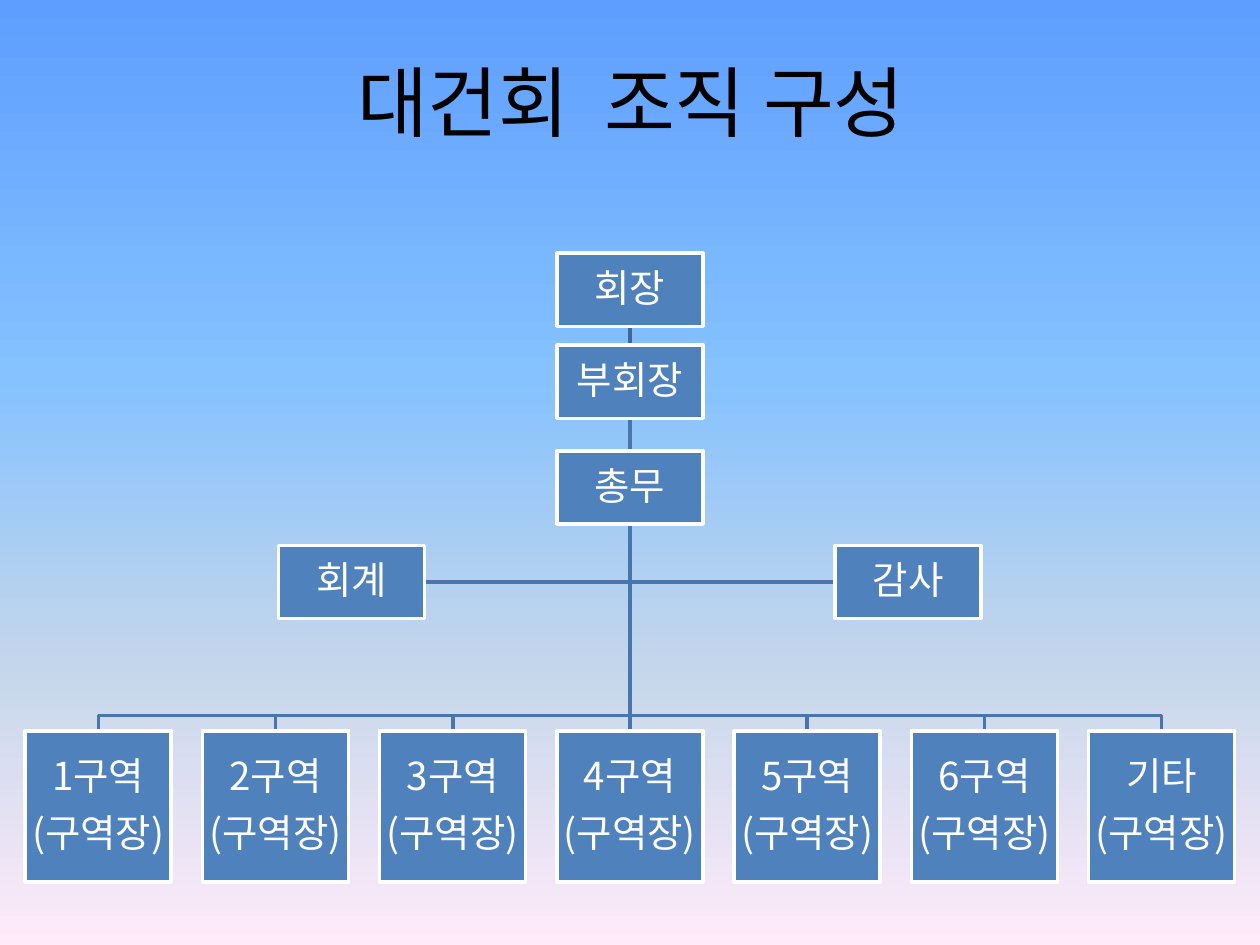
from copy import deepcopy

from pptx import Presentation
from pptx.dml.color import RGBColor
from pptx.enum.shapes import MSO_CONNECTOR, MSO_SHAPE
from pptx.enum.text import MSO_ANCHOR, PP_ALIGN
from pptx.oxml.ns import qn
from pptx.util import Inches, Pt

COLORS = {"box": "4F81BD", "line": "4875AC", "top_line": "3F6797",
          "white": "FFFFFF", "black": "000000"}
SKY = [(0, "5E9EFF"), (0.4, "85C2FF"), (0.7, "C4D6EB"), (1, "FFEBFA")]
FONT = "Noto Sans CJK KR"
DISTRICTS = ["1구역", "2구역", "3구역", "4구역", "5구역", "6구역", "기타"]


def write(frame, text, size=22, color="white", inset=0.02, spacing=0.9, after=9):
    """Fill a text frame with centred paragraphs, one for each line of text."""
    frame.word_wrap = True
    frame.vertical_anchor = MSO_ANCHOR.MIDDLE
    frame.margin_left = frame.margin_right = Inches(inset)
    frame.margin_top = frame.margin_bottom = Inches(inset)
    for index, line in enumerate(text.split("\n")):
        para = frame.paragraphs[0] if index == 0 else frame.add_paragraph()
        para.alignment = PP_ALIGN.CENTER
        para.line_spacing = spacing
        para.space_after = Pt(after)
        span = para.add_run()
        span.text = line
        span.font.name = FONT
        span.font.size = Pt(size)
        span.font.color.rgb = RGBColor.from_string(COLORS[color])
        properties = span.font._element
        east_asian = properties.makeelement(qn("a:ea"), {"typeface": FONT})
        properties.find(qn("a:latin")).addnext(east_asian)


class Chart:
    """Draw an organisation chart on a grid of centred columns and 75 rows."""

    def __init__(self, deck, page, count):
        self.page = page
        self.middle = deck.slide_width // 2
        self.row = deck.slide_height / 75
        self.box_width = Inches(1.16)
        self.column = (deck.slide_width - 2 * Inches(0.2) - self.box_width) / (count - 1)

    def point(self, column, row):
        return round(self.middle + column * self.column), round(row * self.row)

    def background(self, stops):
        fill = self.page.background.fill
        fill.gradient()
        fill.gradient_angle = 270
        stop_list = self.page.element.find(".//" + qn("a:gsLst"))
        while len(stop_list) < len(stops):
            stop_list.append(deepcopy(stop_list[0]))
        for stop, (position, color) in zip(fill.gradient_stops, stops):
            stop.position = position
            stop.color.rgb = RGBColor.from_string(color)

    def title(self, text):
        box = self.page.shapes.add_textbox(Inches(0.51), Inches(0.17), Inches(9), Inches(1.25))
        write(box.text_frame, text, size=44, color="black", inset=0.05, spacing=1, after=0)

    def box(self, text, column, row, rows=5.8):
        center, top = self.point(column, row)
        box = self.page.shapes.add_shape(
            MSO_SHAPE.RECTANGLE, center - self.box_width // 2, top,
            self.box_width, round(rows * self.row))
        box.shadow.inherit = False
        box.fill.solid()
        box.fill.fore_color.rgb = RGBColor.from_string(COLORS["box"])
        self.stroke(box, "white")
        write(box.text_frame, text)
        return box

    def stroke(self, shape, color):
        shape.line.color.rgb = RGBColor.from_string(COLORS[color])
        shape.line.width = Pt(2)

    def send_back(self, shape):
        self.page.shapes.element.insert(2, shape.element)

    def link(self, upper, lower, color="line"):
        line = self.page.shapes.add_connector(MSO_CONNECTOR.STRAIGHT, 0, 0, 0, 0)
        line.begin_connect(upper, 2)
        line.end_connect(lower, 0)
        self.stroke(line, color)
        properties = line.element.spPr
        properties.append(properties.makeelement(qn("a:effectLst"), {}))
        self.send_back(line)

    def elbow(self, start, *points):
        builder = self.page.shapes.build_freeform(*start)
        builder.add_line_segments(points, close=False)
        bend = builder.convert_to_shape()
        bend.shadow.inherit = False
        bend.fill.background()
        self.stroke(bend, "line")
        self.send_back(bend)


def main():
    """Build and save the organisation slide."""
    deck = Presentation()
    deck.slide_width, deck.slide_height = Inches(10), Inches(7.5)
    page = deck.slides.add_slide(deck.slide_layouts[6])
    chart = Chart(deck, page, len(DISTRICTS))
    chart.background(SKY)
    chart.title("대건회  조직 구성")

    president = chart.box("회장", 0, 20.1)
    deputy = chart.box("부회장", 0, 27.4)
    secretary = chart.box("총무", 0, 35.8)
    chart.link(president, deputy, "top_line")
    chart.link(deputy, secretary)
    trunk = chart.point(0, 41.6)

    for number, name in enumerate(DISTRICTS):
        column = number - len(DISTRICTS) // 2
        district = chart.box(f"{name}\n(구역장)", column, 58, rows=12)
        if column == 0:
            chart.link(secretary, district)
        else:
            chart.elbow(trunk, chart.point(0, 56.8), chart.point(column, 56.8),
                        chart.point(column, 58))

    for name, side in (("회계", -1), ("감사", 1)):
        staff = chart.box(name, side * 1.57, 43.3)
        edge = staff.left if side > 0 else staff.left + staff.width
        level = staff.top + staff.height // 2
        chart.elbow(trunk, (chart.middle, level), (edge, level))

    deck.save("out.pptx")


if __name__ == "__main__":
    main()
